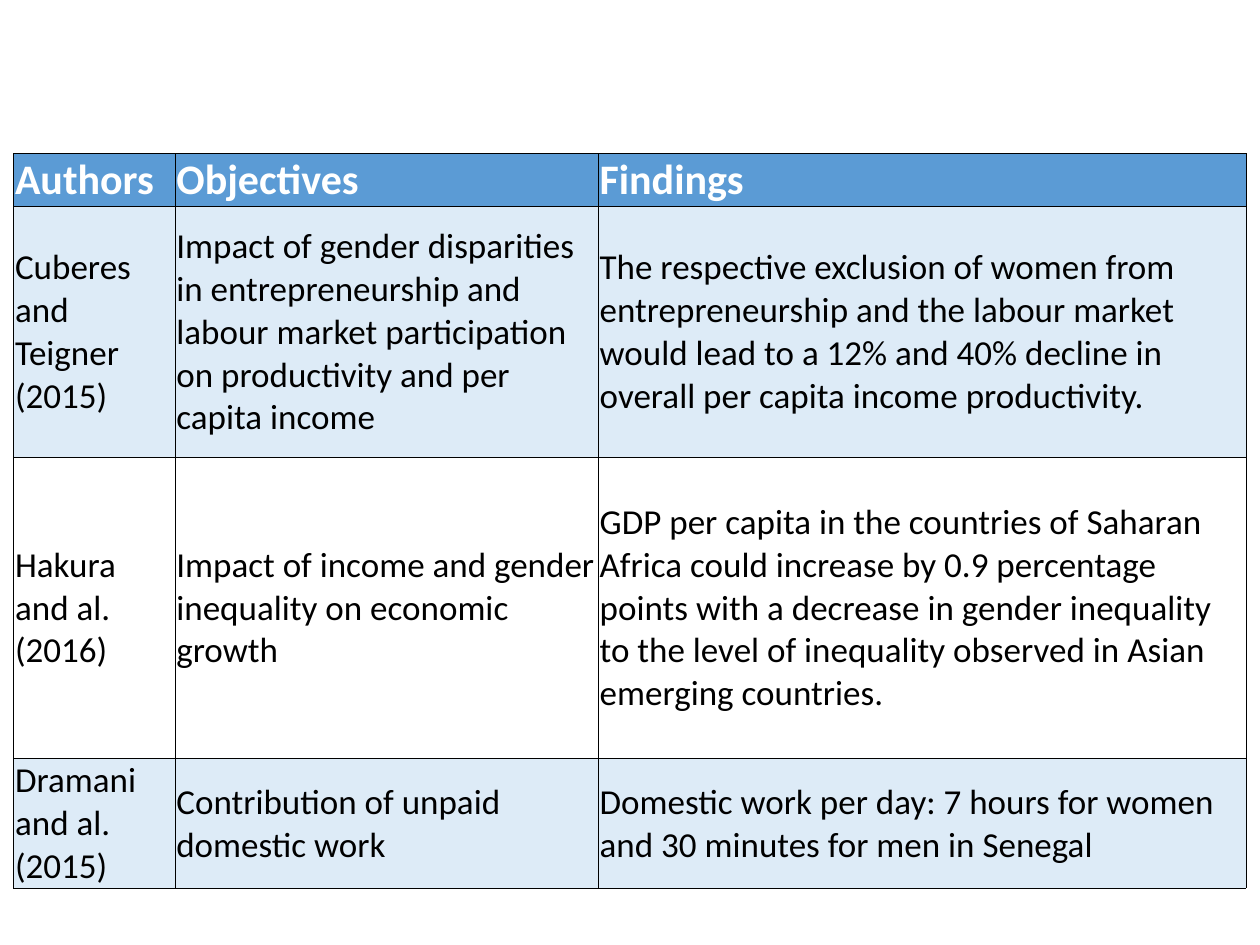
from lxml.etree import SubElement
from pptx import Presentation
from pptx.dml.color import RGBColor
from pptx.enum.text import MSO_ANCHOR as Anchor
from pptx.oxml.ns import qn
from pptx.util import Inches, Pt

HEADER_BLUE = RGBColor(0x5B, 0x9B, 0xD5)
BAND_BLUE = RGBColor(0xDD, 0xEB, 0xF7)
WHITE = RGBColor(0xFF, 0xFF, 0xFF)
BLACK = RGBColor(0, 0, 0)

HEADER_FONT = {"name": "Calibri", "size": Pt(24), "bold": True}
BODY_FONT = {"name": "Calibri", "size": Pt(20), "bold": False}
CELL_MARGINS = {
    "margin_left": Inches(0.01),
    "margin_right": Inches(0.01),
    "margin_top": Inches(0.01),
    "margin_bottom": 0,
}

COLUMN_WIDTHS = (1.28, 3.36, 5.14)
ROW_HEIGHTS = (0.41, 1.99, 2.39, 1.03)
STUDIES = (
    ("Authors", "Objectives", "Findings"),
    (
        "Cuberes and Teigner (2015)",
        "Impact of gender disparities in entrepreneurship and labour market "
        "participation on productivity and per capita income",
        "The respective exclusion of women from entrepreneurship and the labour "
        "market would lead to a 12% and 40% decline in overall per capita income "
        "productivity.",
    ),
    (
        "Hakura and al. (2016)",
        "Impact of income and gender inequality on economic growth",
        "GDP per capita in the countries of Saharan Africa could increase by 0.9 "
        "percentage points with a decrease in gender inequality to the level of "
        "inequality observed in Asian emerging countries.",
    ),
    (
        "Dramani and al. (2015)",
        "Contribution of unpaid domestic work",
        "Domestic work per day: 7 hours for women and 30 minutes for men in Senegal",
    ),
)


def set_values(target, values):
    for name, value in values.items():
        setattr(target, name, value)


def add_borders(cell, color, width):
    properties = cell._tc.get_or_add_tcPr()
    for side in ("a:lnL", "a:lnR", "a:lnT", "a:lnB"):
        line = SubElement(properties, qn(side), w=str(width))
        fill = SubElement(line, qn("a:solidFill"))
        SubElement(fill, qn("a:srgbClr"), val=str(color))


def fill_cell(cell, text, row_number):
    is_header = row_number == 0
    set_values(cell, CELL_MARGINS)
    cell.vertical_anchor = Anchor.BOTTOM if is_header else Anchor.MIDDLE

    # Borders come before the fill in the cell properties
    add_borders(cell, BLACK, Pt(0.5))
    if is_header or row_number % 2:
        cell.fill.solid()
        cell.fill.fore_color.rgb = HEADER_BLUE if is_header else BAND_BLUE
    else:
        cell.fill.background()

    span = cell.text_frame.paragraphs[0].add_run()
    span.text = text
    set_values(span.font, HEADER_FONT if is_header else BODY_FONT)
    span.font.color.rgb = WHITE if is_header else BLACK


def add_studies_table(page, left, top, width, height):
    frame = page.shapes.add_table(
        len(STUDIES), len(COLUMN_WIDTHS), left, top, width, height
    )
    table = frame.table
    for column, column_width in zip(table.columns, COLUMN_WIDTHS):
        column.width = Inches(column_width)
    for row, row_height in zip(table.rows, ROW_HEIGHTS):
        row.height = Inches(row_height)
    for row_number, study in enumerate(STUDIES):
        for column_number, text in enumerate(study):
            fill_cell(table.cell(row_number, column_number), text, row_number)


def main():
    deck = Presentation()
    deck.slide_width = Inches(10)
    deck.slide_height = Inches(7.5)
    page = deck.slides.add_slide(deck.slide_layouts[6])

    # Literature review table
    add_studies_table(
        page,
        Inches(0.11),
        Inches(1.22),
        Inches(sum(COLUMN_WIDTHS)),
        Inches(sum(ROW_HEIGHTS)),
    )
    deck.save("out.pptx")


if __name__ == "__main__":
    main()
